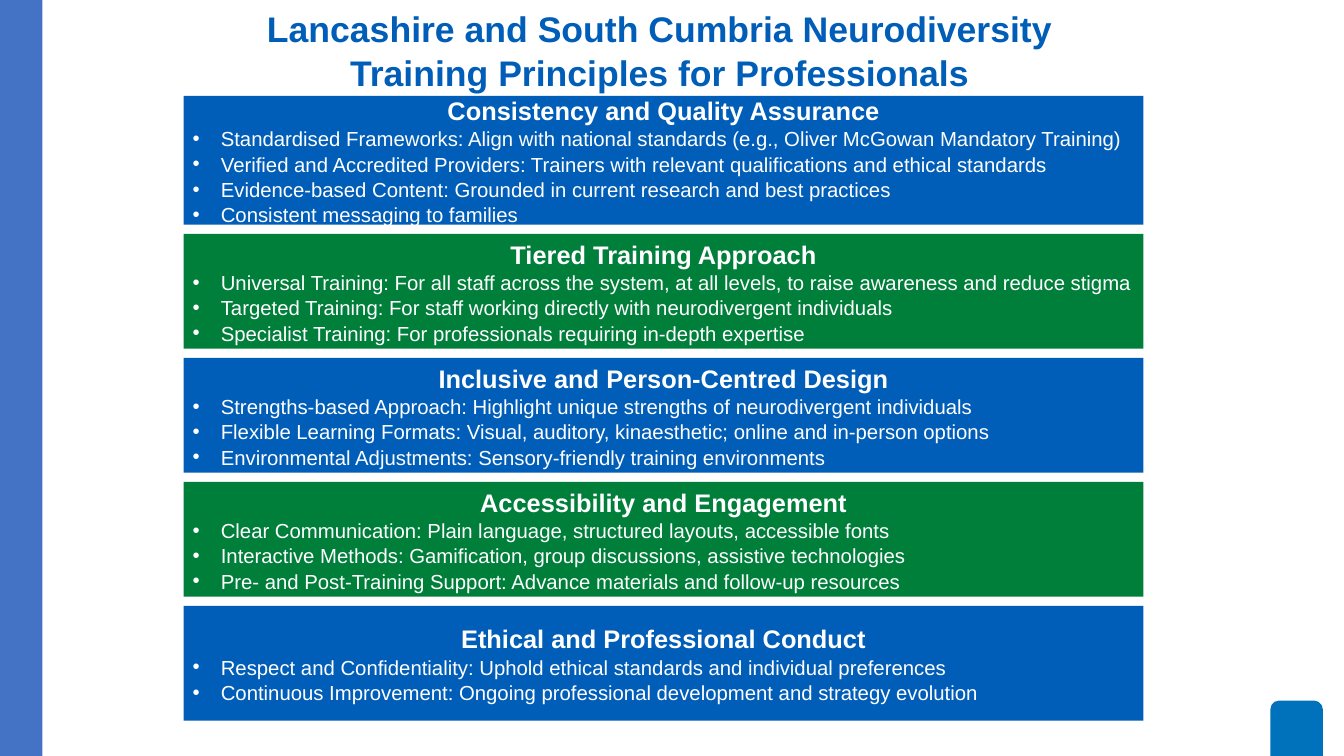
from lxml import etree
from pptx import Presentation
from pptx.dml.color import RGBColor
from pptx.enum.shapes import MSO_SHAPE
from pptx.enum.text import MSO_ANCHOR, MSO_AUTO_SIZE, PP_ALIGN
from pptx.oxml.ns import qn
from pptx.util import Inches, Pt

RECTANGLE, ROUNDED = MSO_SHAPE.RECTANGLE, MSO_SHAPE.ROUNDED_RECTANGLE
TOP, MIDDLE = MSO_ANCHOR.TOP, MSO_ANCHOR.MIDDLE
CENTER, LEFT = PP_ALIGN.CENTER, PP_ALIGN.LEFT
NO_AUTOFIT = MSO_AUTO_SIZE.NONE

COLOURS = {"blue": "005EB8", "green": "007F3B", "white": "FFFFFF",
           "side": "4472C4", "corner": "0072BC"}

TITLE = "Lancashire and South Cumbria Neurodiversity Training Principles for Professionals"
PRINCIPLES = [
    ("Consistency and Quality Assurance", [
        "Standardised Frameworks: Align with national standards (e.g., Oliver McGowan Mandatory Training)",
        "Verified and Accredited Providers: Trainers with relevant qualifications and ethical standards",
        "Evidence-based Content: Grounded in current research and best practices",
        "Consistent messaging to families"]),
    ("Tiered Training Approach", [
        "Universal Training: For all staff across the system, at all levels, to raise awareness and reduce stigma",
        "Targeted Training: For staff working directly with neurodivergent individuals",
        "Specialist Training: For professionals requiring in-depth expertise"]),
    ("Inclusive and Person-Centred Design", [
        "Strengths-based Approach: Highlight unique strengths of neurodivergent individuals",
        "Flexible Learning Formats: Visual, auditory, kinaesthetic; online and in-person options",
        "Environmental Adjustments: Sensory-friendly training environments"]),
    ("Accessibility and Engagement", [
        "Clear Communication: Plain language, structured layouts, accessible fonts",
        "Interactive Methods: Gamification, group discussions, assistive technologies",
        "Pre- and Post-Training Support: Advance materials and follow-up resources"]),
    ("Ethical and Professional Conduct", [
        "Respect and Confidentiality: Uphold ethical standards and individual preferences",
        "Continuous Improvement: Ongoing professional development and strategy evolution"]),
]


class PrinciplesSlide:
    """Holds the slide and the shared style of its title, blocks and panels."""

    font_name = "Arial"
    line_spacing = 1.04

    def __init__(self, deck):
        self.slide = deck.slides.add_slide(deck.slide_layouts[5])

    def set_text(self, paragraph, text, size, colour, bold=False, align=LEFT):
        paragraph.text = text
        paragraph.alignment = align
        paragraph.line_spacing = self.line_spacing
        paragraph.space_before = paragraph.space_after = Pt(0)
        for run in paragraph.runs:
            run.font.name = self.font_name
            run.font.size = Pt(size)
            run.font.bold = bold
            run.font.color.rgb = RGBColor.from_string(COLOURS[colour])

    def title(self, text, left, top, width, height):
        heading = self.slide.shapes.title
        heading.left, heading.top = Inches(left), Inches(top)
        heading.width, heading.height = Inches(width), Inches(height)
        frame = heading.text_frame
        frame.word_wrap = True
        frame.auto_size = NO_AUTOFIT
        frame.vertical_anchor = TOP
        self.set_text(frame.paragraphs[0], text, 25.4, "blue", True, CENTER)

    def block(self, outline, colour, left, top, width, height):
        block = self.slide.shapes.add_shape(
            outline, Inches(left), Inches(top), Inches(width), Inches(height))
        block.shadow.inherit = False
        block.fill.solid()
        block.fill.fore_color.rgb = RGBColor.from_string(COLOURS[colour])
        block.line.fill.background()
        return block

    def bullet(self, paragraph, text):
        properties = paragraph._p.get_or_add_pPr()
        properties.set("marL", str(Inches(0.28)))
        properties.set("indent", str(Inches(-0.28)))
        etree.SubElement(properties, qn("a:buFont"), typeface=self.font_name)
        etree.SubElement(properties, qn("a:buChar"), char="•")
        self.set_text(paragraph, text, 14.5, "white")

    def panel(self, heading, points, colour, top, height):
        frame = self.block(RECTANGLE, colour, 1.82, top, 9.52, height).text_frame
        frame.word_wrap = True
        frame.vertical_anchor = MIDDLE
        frame.margin_left = frame.margin_right = Inches(0.09)
        frame.margin_top = frame.margin_bottom = Inches(0)
        self.set_text(frame.paragraphs[0], heading, 18.1, "white", True, CENTER)
        for point in points:
            self.bullet(frame.add_paragraph(), point)


def main():
    deck = Presentation()
    deck.slide_width, deck.slide_height = Inches(13.33), Inches(7.5)
    page = PrinciplesSlide(deck)
    page.block(ROUNDED, "corner", 12.6, 6.95, 0.52, 0.75)
    page.block(RECTANGLE, "side", -0.07, -0.08, 0.49, 7.84)
    page.title(TITLE, 1.99, 0, 9.11, 0.96)
    top, gap = 0.95, 0.09
    for index, (heading, points) in enumerate(PRINCIPLES):
        height = 1.28 if len(points) > 3 else 1.14
        page.panel(heading, points, ("blue", "green")[index % 2], top, height)
        top += height + gap
    deck.save("out.pptx")


if __name__ == "__main__":
    main()
